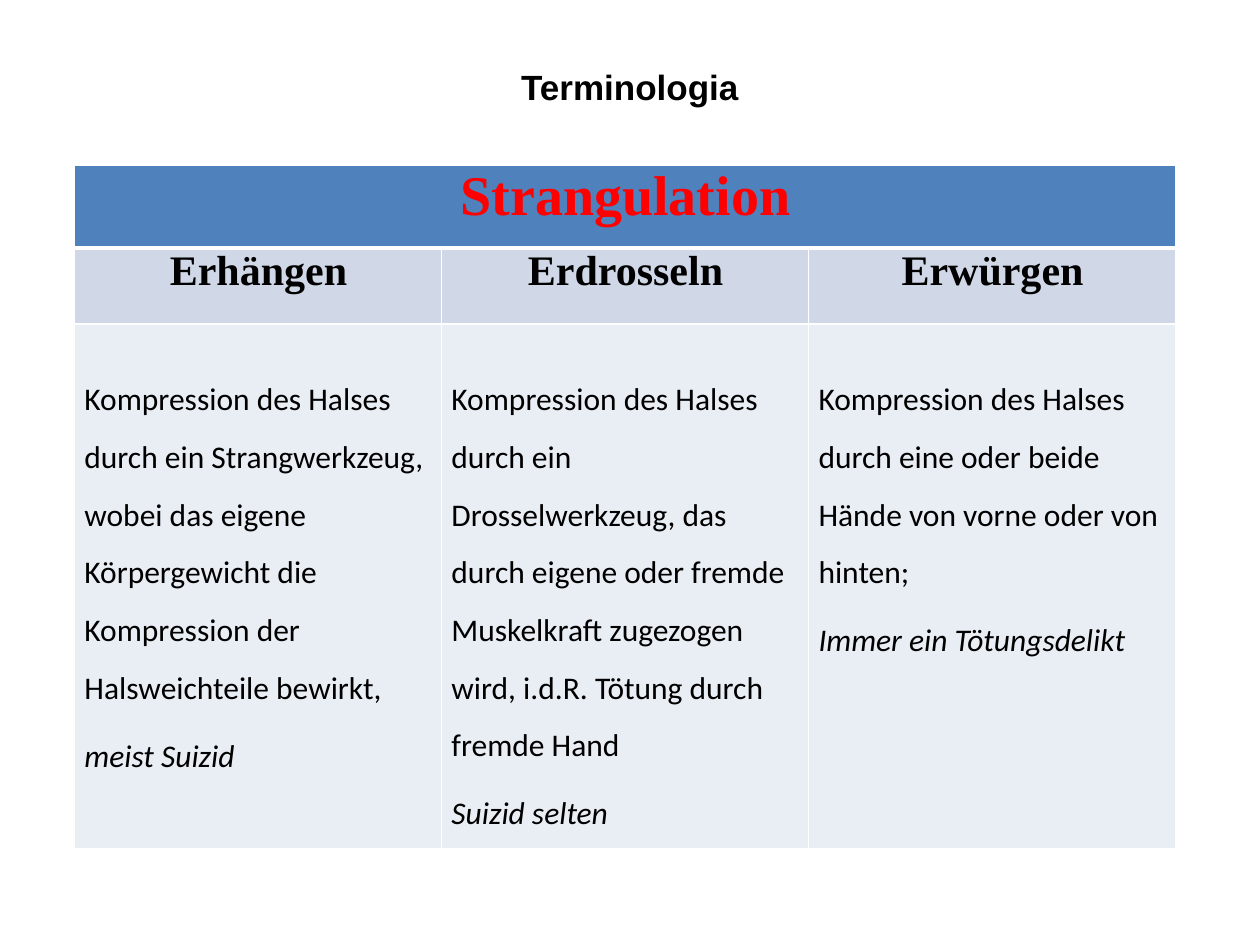
import dataclasses
import typing

import pptx
import pptx.dml.color
import pptx.enum.text
import pptx.oxml.ns
import pptx.util
from lxml import etree

Inches, Pt = pptx.util.Inches, pptx.util.Pt
Align = pptx.enum.text.PP_ALIGN

WIDE, HIGH = 10, 7.5
COLORS = {"black": "000000", "red": "FF0000", "white": "FFFFFF",
          "head": "4F81BD", "band": "D0D8E8", "body": "E9EDF4"}


@dataclasses.dataclass(frozen=True)
class Style:
    font: str
    size: int
    color: str = "black"
    bold: bool = False
    italic: bool = False
    align: typing.Any = Align.CENTER
    space: dict = dataclasses.field(default_factory=dict)


@dataclasses.dataclass(frozen=True)
class Term:
    name: str
    text: str
    note: str


TITLE = Style("Arial", 20, bold=True)
HEAD = Style("Times New Roman", 32, "red", bold=True,
             space={"space_before": Pt(12), "space_after": Pt(12)})
NAME = Style("Times New Roman", 24, bold=True)
TEXT = Style("Calibri", 18, align=Align.LEFT, space={"line_spacing": 1.5})
NOTE = dataclasses.replace(
    TEXT, italic=True, space={"line_spacing": 1.5, "space_before": Pt(6)})

TERMS = [
    Term("Erhängen",
         "Kompression des Halses durch ein Strangwerkzeug, wobei das eigene "
         "Körpergewicht die Kompression der Halsweichteile bewirkt,",
         "meist Suizid"),
    Term("Erdrosseln",
         "Kompression des Halses durch ein Drosselwerkzeug, das durch eigene "
         "oder fremde Muskelkraft zugezogen wird, i.d.R. Tötung durch fremde Hand",
         "Suizid selten"),
    Term("Erwürgen",
         "Kompression des Halses durch eine oder beide Hände von vorne oder "
         "von hinten;",
         "Immer ein Tötungsdelikt"),
]


def rgb(name: str) -> pptx.dml.color.RGBColor:
    return pptx.dml.color.RGBColor.from_string(COLORS[name])


def write(frame, *parts: tuple[str, Style]) -> None:
    """Put each text in a paragraph of its own."""
    frame.word_wrap = True
    for i, (text, style) in enumerate(parts):
        para = frame.add_paragraph() if i else frame.paragraphs[0]
        para.alignment = style.align
        for key, value in style.space.items():
            setattr(para, key, value)
        run = para.add_run()
        run.text = text
        look = {"name": style.font, "size": Pt(style.size),
                "bold": style.bold, "italic": style.italic}
        for key, value in look.items():
            setattr(run.font, key, value)
        run.font.color.rgb = rgb(style.color)


def edge(cell, side: str, width: float) -> None:
    """Draw one white border; side is L, R, T or B."""
    qn = pptx.oxml.ns.qn
    line = etree.SubElement(cell._tc.get_or_add_tcPr(), qn(f"a:ln{side}"),
                            w=str(Pt(width)))
    fill = etree.SubElement(line, qn("a:solidFill"))
    etree.SubElement(fill, qn("a:srgbClr"), val=COLORS["white"])


def dress(cell, fill: str, top: float = 1, base: float = 1,
          pad: float = 0) -> None:
    """Set a cell's borders, fill and margins."""
    for side, width in {"L": 1, "R": 1, "T": top, "B": base}.items():
        edge(cell, side, width)
    cell.fill.solid()
    cell.fill.fore_color.rgb = rgb(fill)
    gaps = {"margin_left": 0.08, "margin_right": 0.07,
            "margin_top": pad, "margin_bottom": 0}
    for key, value in gaps.items():
        setattr(cell, key, Inches(value))


def add_title(slide) -> None:
    box = slide.shapes.add_textbox(
        Inches(0.05 * WIDE), Inches(0.04 * HIGH),
        Inches(0.9 * WIDE), Inches(0.77))
    box.text_frame.vertical_anchor = pptx.enum.text.MSO_ANCHOR.MIDDLE
    write(box.text_frame, ("Terminologia", TITLE))


def add_terms(slide) -> None:
    rows, wide = [0.66, 0.6, 4.17], 8.74
    table = slide.shapes.add_table(
        len(rows), len(TERMS), Inches(0.59), Inches(1.31),
        Inches(wide), Inches(sum(rows))).table
    table.first_row = table.horz_banding = False
    for row, high in zip(table.rows, rows):
        row.height = Inches(high)

    for i, term in enumerate(TERMS):
        table.columns[i].width = Inches(wide / len(TERMS))
        head, name, body = (table.cell(row, i) for row in range(len(rows)))
        dress(head, "head", base=3)
        dress(name, "band", top=3)
        dress(body, "body", pad=0.3)
        write(name.text_frame, (term.name, NAME))
        write(body.text_frame, (term.text, TEXT), (term.note, NOTE))

    head = table.cell(0, 0)
    head.merge(table.cell(0, len(TERMS) - 1))
    write(head.text_frame, ("Strangulation", HEAD))


def main() -> None:
    deck = pptx.Presentation()
    deck.slide_width, deck.slide_height = Inches(WIDE), Inches(HIGH)
    slide = deck.slides.add_slide(deck.slide_layouts[6])
    add_title(slide)
    add_terms(slide)
    deck.save("out.pptx")


if __name__ == "__main__":
    main()
